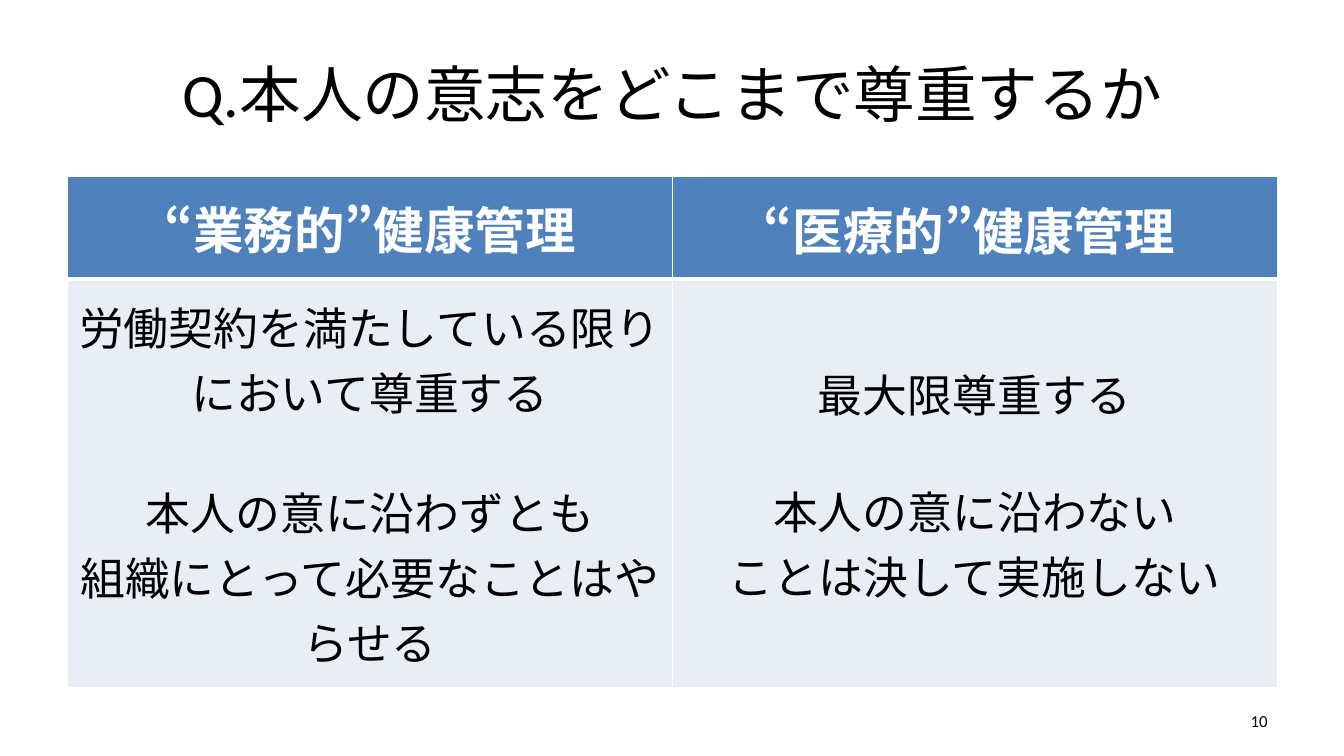
import pptx
import pptx.util
import pptx.dml.color
import pptx.enum.lang
import pptx.enum.text
import pptx.oxml

Inches = pptx.util.Inches
Pt = pptx.util.Pt
ALIGN = pptx.enum.text.PP_ALIGN
MIDDLE = pptx.enum.text.MSO_ANCHOR.MIDDLE
COLORS = {"ink": "000000", "header": "4F81BD", "body": "E9EDF4", "white": "FFFFFF"}
DRAWING_NS = "http://schemas.openxmlformats.org/drawingml/2006/main"

POLICIES = [
    {
        "heading": "“業務的”健康管理",
        "respect": "労働契約を満たしている限りにおいて尊重する",
        "actions": ["本人の意に沿わずとも", "組織にとって必要なことはやらせる"],
        "font": "Calibri",
        "gap": 39,
        "insets": (0.11, 0.05, 0.11, 0.05),
    },
    {
        "heading": "“医療的”健康管理 ",
        "respect": "最大限尊重する",
        "actions": ["本人の意に沿わない", "ことは決して実施しない"],
        "font": "Arial",
        "gap": 37,
        "insets": (0.01, 0.01, 0.01, 0),
    },
]


def rgb(name):
    return pptx.dml.color.RGBColor.from_string(COLORS[name])


def write(frame, lines, size, font="Calibri", color="ink", bold=False, align=ALIGN.CENTER):
    for index, line in enumerate(lines):
        paragraph = frame.paragraphs[0] if index == 0 else frame.add_paragraph()
        paragraph.alignment = align
        run = paragraph.add_run()
        run.text = line
        run.font.size = Pt(size)
        run.font.name = font
        run.font.bold = bold
        run.font.color.rgb = rgb(color)
        run.font.language_id = pptx.enum.lang.MSO_LANGUAGE_ID.JAPANESE


def add_label(slide, box, text, size, align):
    label = slide.shapes.add_textbox(*map(Inches, box)).text_frame
    label.word_wrap = True
    label.vertical_anchor = MIDDLE
    write(label, [text], size, align=align)


def set_borders(cell, top, bottom):
    properties = cell._tc.get_or_add_tcPr()
    widths = {"lnL": 1, "lnR": 1, "lnT": top, "lnB": bottom}
    for position, (side, width) in enumerate(widths.items()):
        border = pptx.oxml.parse_xml(
            f'<a:{side} xmlns:a="{DRAWING_NS}" w="{Pt(width)}"><a:solidFill>'
            f'<a:srgbClr val="{COLORS["white"]}"/></a:solidFill></a:{side}>'
        )
        properties.insert(position, border)


def style_cell(cell, fill, insets, top, bottom):
    cell.fill.solid()
    cell.fill.fore_color.rgb = rgb(fill)
    cell.vertical_anchor = MIDDLE
    cell.margin_left, cell.margin_top, cell.margin_right, cell.margin_bottom = map(Inches, insets)
    set_borders(cell, top, bottom)


def add_policy_table(slide, left, top, width, row_heights):
    policies = slide.shapes.add_table(
        2, len(POLICIES), Inches(left), Inches(top), Inches(width), Inches(sum(row_heights))
    ).table
    policies.horz_banding = False
    for row, height in zip(policies.rows, row_heights):
        row.height = Inches(height)
    for column, policy in enumerate(POLICIES):
        policies.columns[column].width = Inches(width / len(POLICIES))
        heading = policies.cell(0, column)
        style_cell(heading, "header", policy["insets"], 1, 3)
        write(heading.text_frame, [policy["heading"]], 36, color="white", bold=True)
        stance = policies.cell(1, column)
        style_cell(stance, "body", policy["insets"], 3, 1)
        write(stance.text_frame, [policy["respect"], *policy["actions"]], 32, policy["font"])
        stance.text_frame.paragraphs[1].space_before = Pt(policy["gap"])


def main():
    deck = pptx.Presentation()
    deck.slide_width, deck.slide_height = Inches(13.33), Inches(7.5)
    slide = deck.slides.add_slide(deck.slide_layouts[6])
    add_label(slide, (0.67, 0.3, 12, 1.25), "Q.本人の意志をどこまで尊重するか", 44, ALIGN.CENTER)
    add_policy_table(slide, 0.67, 1.75, 12, (1.02, 4.05))
    add_label(slide, (9.56, 6.95, 3.11, 0.4), "10", 12, ALIGN.RIGHT)
    deck.save("out.pptx")


if __name__ == "__main__":
    main()
